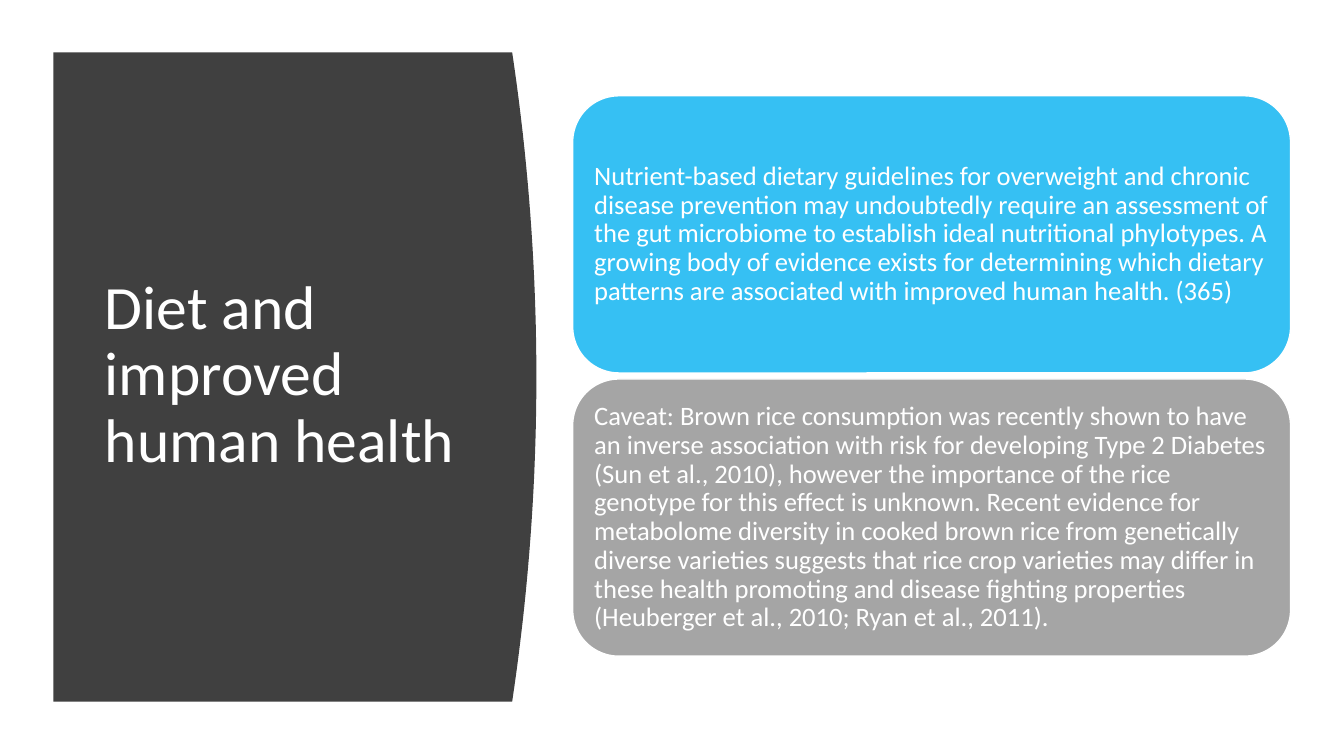
from dataclasses import dataclass

from lxml.etree import SubElement
from pptx import Presentation
from pptx.dml.color import RGBColor
from pptx.enum.shapes import MSO_SHAPE
from pptx.enum.text import MSO_ANCHOR, MSO_AUTO_SIZE, PP_ALIGN
from pptx.oxml.ns import qn
from pptx.shapes.autoshape import Shape
from pptx.slide import Slide
from pptx.text.text import TextFrame
from pptx.util import Inches, Pt


@dataclass(frozen=True)
class Theme:
    font: str = "Calibri"
    title_size: int = 44
    body_size: int = 19
    white: str = "FFFFFF"
    charcoal: str = "404040"
    blue: str = "00B0F0"
    grey: str = "A5A5A5"


@dataclass(frozen=True)
class Statement:
    words: str
    fill: str
    opacity: int = 100


THEME = Theme()
STATEMENTS = [
    Statement(
        "Nutrient-based dietary guidelines for overweight and chronic disease "
        "prevention may undoubtedly require an assessment of the gut microbiome "
        "to establish ideal nutritional phylotypes. A growing body of evidence "
        "exists for determining which dietary patterns are associated with "
        "improved human health. (365)",
        THEME.blue,
        opacity=79,
    ),
    Statement(
        "Caveat: Brown rice consumption was recently shown to have an inverse "
        "association with risk for developing Type 2 Diabetes (Sun et al., 2010), "
        "however the importance of the rice genotype for this effect is unknown. "
        "Recent evidence for metabolome diversity in cooked brown rice from "
        "genetically diverse varieties suggests that rice crop varieties may "
        "differ in these health promoting and disease fighting properties "
        "(Heuberger et al., 2010; Ryan et al., 2011).",
        THEME.grey,
    ),
]
STATEMENT_TOP = 0.95
STATEMENT_PITCH = 2.81


def write_text(frame: TextFrame, words: str, *, size: int, margin: float) -> None:
    frame.word_wrap = True
    frame.auto_size = MSO_AUTO_SIZE.NONE
    frame.vertical_anchor = MSO_ANCHOR.MIDDLE
    frame.margin_left = frame.margin_right = Inches(margin)
    frame.margin_top = frame.margin_bottom = Inches(0.08)
    paragraph = frame.paragraphs[0]
    paragraph.alignment = PP_ALIGN.LEFT
    paragraph.line_spacing = 0.9
    run = paragraph.add_run()
    run.text = words
    run.font.name = THEME.font
    run.font.size = Pt(size)
    run.font.color.rgb = RGBColor.from_string(THEME.white)


def paint(shape: Shape, color: str, opacity: int = 100) -> None:
    shape.shadow.inherit = False
    shape.fill.solid()
    shape.fill.fore_color.rgb = RGBColor.from_string(color)
    if opacity < 100:
        tint = shape.fill._xPr.find(qn("a:solidFill"))[0]
        SubElement(tint, qn("a:alpha")).set("val", str(opacity * 1000))


def draw_curved_panel(slide: Slide) -> Shape:
    left, top, bottom = 0.53, 0.52, 6.96
    edge, bulge, steps = 5.08, 0.24, 40
    curve = []
    for step in range(steps + 1):
        progress = step / steps
        x = edge + bulge * (1 - (2 * progress - 1) ** 2)
        y = top + (bottom - top) * progress
        curve.append((Inches(x), Inches(y)))
    outline = slide.shapes.build_freeform(Inches(left), Inches(top))
    outline.add_line_segments([*curve, (Inches(left), Inches(bottom))], close=True)
    panel = outline.convert_to_shape()
    paint(panel, THEME.charcoal)
    panel.line.fill.background()
    return panel


def draw_title(slide: Slide) -> None:
    title = slide.shapes.title
    title.left, title.top = Inches(0.94), Inches(1.11)
    title.width, title.height = Inches(3.74), Inches(5.24)
    write_text(title.text_frame, "Diet and improved human health",
               size=THEME.title_size, margin=0.1)


def draw_statement(slide: Slide, statement: Statement, top: float) -> None:
    card = slide.shapes.add_shape(
        MSO_SHAPE.ROUNDED_RECTANGLE,
        Inches(5.68), Inches(top), Inches(7.12), Inches(2.75),
    )
    paint(card, statement.fill, statement.opacity)
    card.line.color.rgb = RGBColor.from_string(THEME.white)
    card.line.width = Pt(1)
    write_text(card.text_frame, statement.words, size=THEME.body_size, margin=0.08)


def main() -> None:
    deck = Presentation()
    deck.slide_width, deck.slide_height = Inches(13.33), Inches(7.5)
    slide = deck.slides.add_slide(deck.slide_layouts.get_by_name("Title Only"))
    panel = draw_curved_panel(slide)
    slide.shapes.title.element.addprevious(panel.element)
    draw_title(slide)
    for index, statement in enumerate(STATEMENTS):
        draw_statement(slide, statement, STATEMENT_TOP + index * STATEMENT_PITCH)
    deck.save("out.pptx")


if __name__ == "__main__":
    main()
